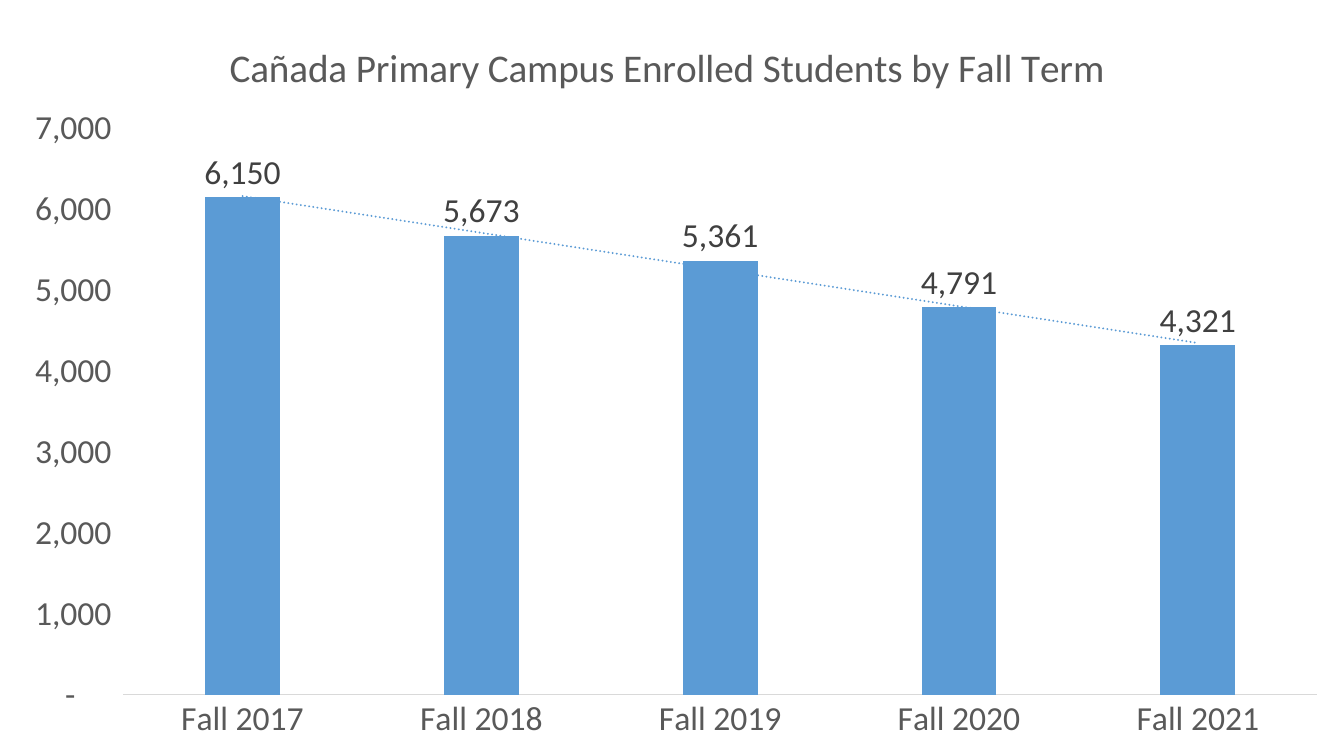
from dataclasses import dataclass

from pptx import Presentation
from pptx.chart.data import CategoryChartData
from pptx.dml.color import RGBColor
from pptx.enum.chart import XL_CHART_TYPE as Kind
from pptx.enum.chart import XL_LABEL_POSITION as Spot
from pptx.enum.chart import XL_TICK_MARK as Tick
from pptx.oxml import parse_xml
from pptx.oxml.ns import nsdecls
from pptx.util import Pt

WIDE, HIGH = 960, 540
FACE = "Calibri"
BLUE, GRAY, DARK, PALE = "5B9BD5", "595959", "404040", "D9D9D9"
COUNT = r'_(* #,##0_);_(* \(#,##0\);_(* "-"??_);_('


@dataclass
class Term:
    name: str
    count: int


@dataclass
class Box:
    x: float
    y: float
    w: float = 0
    h: float = 0


TERMS = [
    Term("Fall 2017", 6150),
    Term("Fall 2018", 5673),
    Term("Fall 2019", 5361),
    Term("Fall 2020", 4791),
    Term("Fall 2021", 4321),
]


def color(code: str) -> RGBColor:
    return RGBColor.from_string(code)


def style(font, size: float, code: str) -> None:
    font.name = FACE
    font.size = Pt(size)
    font.bold = False
    font.color.rgb = color(code)


def write(frame, text: str, *, size: float, code: str) -> None:
    run = frame.paragraphs[0].add_run()
    run.text = text
    style(run.font, size, code)


def place(host, box: Box, index: int) -> None:
    """Fix a chart part at a box given in points."""
    for old in host.xpath("./c:layout"):
        host.remove(old)
    inner = '<c:layoutTarget val="inner"/>' if box.w else ""
    size = ""
    if box.w:
        size = f'<c:w val="{box.w / WIDE}"/><c:h val="{box.h / HIGH}"/>'
    host.insert(index, parse_xml(
        f'<c:layout {nsdecls("c")}><c:manualLayout>{inner}'
        '<c:xMode val="edge"/><c:yMode val="edge"/>'
        f'<c:x val="{box.x / WIDE}"/><c:y val="{box.y / HIGH}"/>{size}'
        '</c:manualLayout></c:layout>'))


def add_trend(chart) -> None:
    trend = parse_xml(
        f'<c:trendline {nsdecls("c", "a")}><c:spPr>'
        f'<a:ln w="{Pt(1.5)}" cap="rnd"><a:solidFill>'
        f'<a:srgbClr val="{BLUE}"/></a:solidFill>'
        '<a:prstDash val="sysDot"/></a:ln></c:spPr>'
        '<c:trendlineType val="linear"/><c:dispRSqr val="0"/>'
        '<c:dispEq val="0"/></c:trendline>')
    chart.element.xpath(".//c:ser/c:cat")[0].addprevious(trend)


def add_bars(slide) -> None:
    data = CategoryChartData()
    data.categories = [term.name for term in TERMS]
    data.add_series("Series 1", [term.count for term in TERMS])
    chart = slide.shapes.add_chart(
        Kind.COLUMN_CLUSTERED, 0, 0, Pt(WIDE), Pt(HIGH), data).chart
    style(chart.font, 24, "000000")
    chart.has_legend = False

    # Title
    chart.has_title = True
    write(chart.chart_title.text_frame,
          "Cañada Primary Campus Enrolled Students by Fall Term",
          size=28, code=GRAY)
    place(chart.element.xpath(".//c:title")[0], Box(159, 24), 1)
    place(chart.element.xpath(".//c:plotArea")[0],
          Box(88, 92, 853, 404.5), 0)

    # Axes
    cats, vals = chart.category_axis, chart.value_axis
    for axis in (cats, vals):
        axis.major_tick_mark = axis.minor_tick_mark = Tick.NONE
        axis.has_major_gridlines = False
        style(axis.tick_labels.font, 24, GRAY)
    cats.format.line.color.rgb = color(PALE)
    cats.format.line.width = Pt(0.75)
    vals.format.line.fill.background()
    vals.minimum_scale, vals.maximum_scale = 0, 7000
    vals.major_unit = 1000
    vals.tick_labels.number_format = COUNT
    vals.tick_labels.number_format_is_linked = False

    # Columns, labels and trend line
    plot = chart.plots[0]
    plot.gap_width, plot.overlap = 219, -27
    plot.vary_by_categories = False
    bars = plot.series[0]
    bars.format.fill.solid()
    bars.format.fill.fore_color.rgb = color(BLUE)
    tags = bars.data_labels
    tags.show_value = True
    tags.position = Spot.OUTSIDE_END
    tags.number_format = COUNT
    tags.number_format_is_linked = False
    style(tags.font, 24, DARK)
    add_trend(chart)


def main() -> None:
    deck = Presentation()
    deck.slide_width, deck.slide_height = Pt(WIDE), Pt(HIGH)
    add_bars(deck.slides.add_slide(deck.slide_layouts[6]))
    deck.save("out.pptx")


if __name__ == "__main__":
    main()
